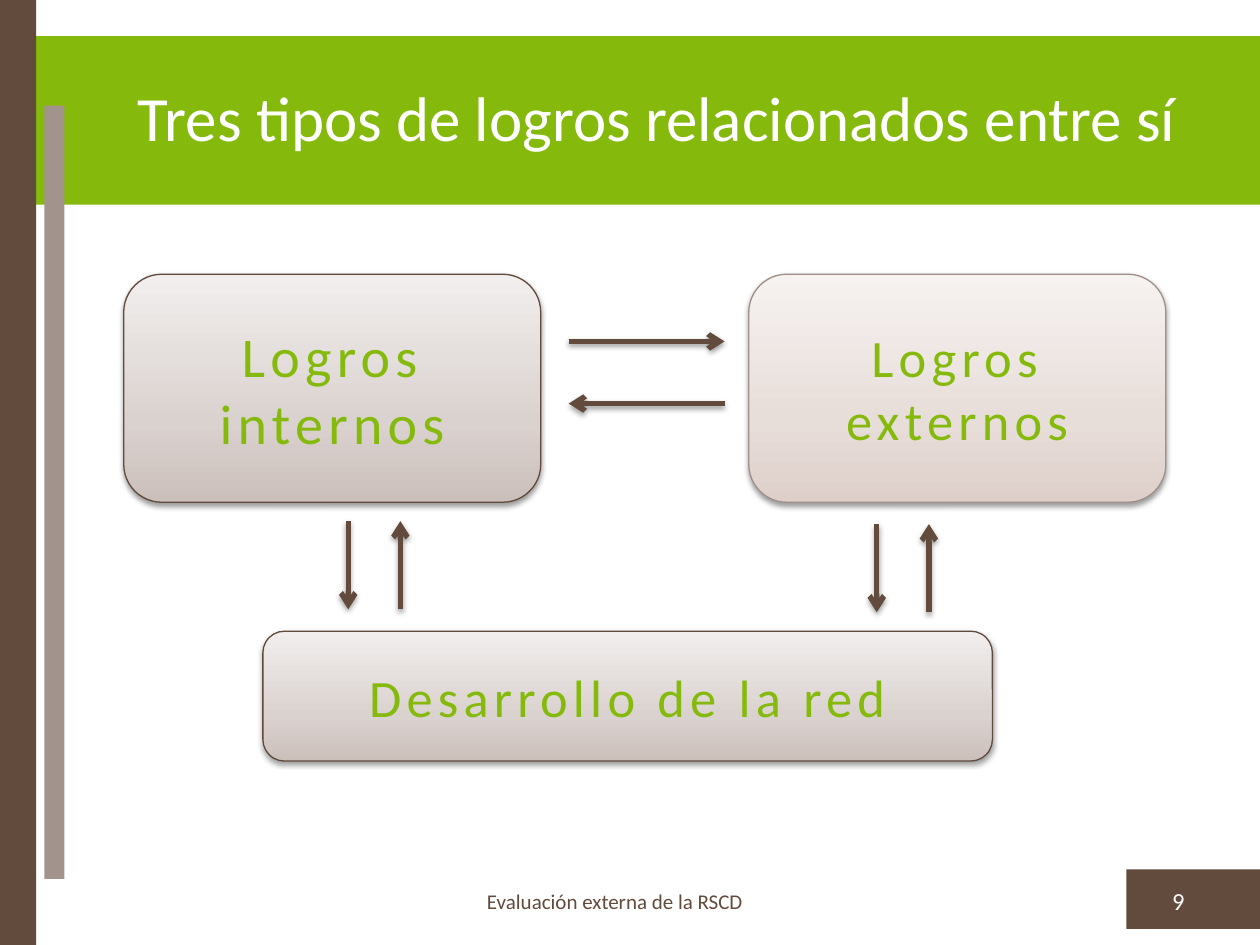
import copy
from typing import NamedTuple

import pptx
import pptx.dml.color
import pptx.enum.shapes
import pptx.enum.text
import pptx.oxml
import pptx.oxml.ns
import pptx.util

Pt = pptx.util.Pt
RGBColor = pptx.dml.color.RGBColor
Shape = pptx.enum.shapes.MSO_SHAPE
Align = pptx.enum.text.PP_ALIGN
qn = pptx.oxml.ns.qn

BROWN = RGBColor(0x62, 0x4B, 0x3D)
DARK_EDGE = RGBColor(0x61, 0x49, 0x3B)
LIGHT_EDGE = RGBColor(0x9F, 0x90, 0x89)
TAUPE = RGBColor(0xA2, 0x93, 0x8D)
GREEN = RGBColor(0x85, 0xBA, 0x0D)
WHITE = RGBColor(0xFF, 0xFF, 0xFF)
DARK_FADE = (RGBColor(0xCB, 0xBF, 0xBA), RGBColor(0xDA, 0xD2, 0xCF), RGBColor(0xF1, 0xEE, 0xED))
LIGHT_FADE = (RGBColor(0xDE, 0xCF, 0xCA), RGBColor(0xE7, 0xDD, 0xD9), RGBColor(0xF6, 0xF2, 0xF0))
FONT = "Calibri"


class Area(NamedTuple):
    left: float
    top: float
    width: float
    height: float


class Band(NamedTuple):
    area: Area
    color: RGBColor


class Label(NamedTuple):
    area: Area
    text: str
    size: float
    color: RGBColor
    align: Align


class Achievement(NamedTuple):
    area: Area
    text: str
    size: float
    fade: tuple[RGBColor, RGBColor, RGBColor]
    edge: RGBColor


class Arrow(NamedTuple):
    x1: float
    y1: float
    x2: float
    y2: float


BANDS = [
    Band(Area(643.7, 496.8, 76.3, 34), BROWN),
    Band(Area(0, 20.7, 720, 96.3), GREEN),
    Band(Area(0, 0, 20.7, 540), BROWN),
    Band(Area(25.4, 60.3, 11.4, 442), TAUPE),
]
LABELS = [
    Label(Area(257.8, 500.4, 187.2, 28.8), "Evaluación externa de la RSCD", 12, BROWN, Align.CENTER),
    Label(Area(516.2, 500.4, 167.8, 28.8), "9", 14, WHITE, Align.RIGHT),
    Label(Area(31, 21.6, 689, 90), "Tres tipos de logros relacionados entre sí", 36, WHITE, Align.CENTER),
]
ACHIEVEMENTS = [
    Achievement(Area(70.7, 156.7, 238.3, 130.3), "Logros internos", 32, DARK_FADE, DARK_EDGE),
    Achievement(Area(427.9, 156.7, 238.3, 130.3), "Logros externos", 30, LIGHT_FADE, LIGHT_EDGE),
    Achievement(Area(150.2, 360.7, 416.9, 74.2), "Desarrollo de la red", 30, DARK_FADE, DARK_EDGE),
]
ARROWS = [
    Arrow(325, 195.1, 414, 195.1),
    Arrow(414, 230.6, 325, 230.6),
]
for x, top in ((199, 297.8), (501, 299.5)):
    ARROWS += [Arrow(x, top, x, top + 50.4), Arrow(x + 29.8, top + 50.4, x + 29.8, top)]


def lengths(area: Area) -> list[pptx.util.Length]:
    return [Pt(v) for v in area]


def write(sp, text: str, size: float, color: RGBColor, align: Align):
    """Fill a shape with one vertically centred run and return the run."""
    tf = sp.text_frame
    tf.word_wrap = True
    tf.vertical_anchor = pptx.enum.text.MSO_ANCHOR.MIDDLE
    p = tf.paragraphs[0]
    p.alignment = align
    r = p.add_run()
    r.text = text
    r.font.name = FONT
    r.font.size = Pt(size)
    r.font.color.rgb = color
    return r


def soft_shadow():
    return pptx.oxml.parse_xml(
        f'<a:effectLst {pptx.oxml.ns.nsdecls("a")}>'
        '<a:outerShdw blurRad="40000" dist="20000" dir="5400000" rotWithShape="0">'
        '<a:srgbClr val="000000"><a:alpha val="38000"/></a:srgbClr>'
        '</a:outerShdw></a:effectLst>'
    )


def draw_band(s, band: Band) -> None:
    sp = s.shapes.add_shape(Shape.RECTANGLE, *lengths(band.area))
    sp.shadow.inherit = False
    sp.fill.solid()
    sp.fill.fore_color.rgb = band.color
    sp.line.fill.background()


def draw_label(s, label: Label) -> None:
    sp = s.shapes.add_textbox(*lengths(label.area))
    write(sp, label.text, label.size, label.color, label.align)


def fade_upwards(sp, colors: tuple[RGBColor, RGBColor, RGBColor]) -> None:
    """Three-stop gradient from the bottom edge to the top edge."""
    sp.fill.gradient()
    sp.fill.gradient_angle = 90
    first = sp._element.spPr.find(".//" + qn("a:gs"))
    first.addnext(copy.deepcopy(first))
    for stop, color, position in zip(sp.fill.gradient_stops, colors, (0, 0.35, 1)):
        stop.color.rgb = color
        stop.position = position


def draw_achievement(s, item: Achievement) -> None:
    sp = s.shapes.add_shape(Shape.ROUNDED_RECTANGLE, *lengths(item.area))
    fade_upwards(sp, item.fade)
    sp.line.color.rgb = item.edge
    sp.line.width = Pt(0.75)
    sp._element.spPr.append(soft_shadow())
    r = write(sp, item.text, item.size, GREEN, Align.CENTER)
    r.font._element.set("spc", "300")
    sp.text_frame.paragraphs[0].space_after = Pt(10)


def draw_arrow(s, arrow: Arrow) -> None:
    cx = s.shapes.add_connector(
        pptx.enum.shapes.MSO_CONNECTOR.STRAIGHT, *(Pt(v) for v in arrow)
    )
    cx.line.color.rgb = BROWN
    cx.line.width = Pt(3)
    cx.line._get_or_add_ln().append(
        pptx.oxml.parse_xml(f'<a:tailEnd {pptx.oxml.ns.nsdecls("a")} type="arrow"/>')
    )
    cx._element.spPr.append(soft_shadow())


def main() -> None:
    prs = pptx.Presentation()
    prs.slide_width, prs.slide_height = Pt(720), Pt(540)
    s = prs.slides.add_slide(prs.slide_layouts[6])
    for band in BANDS:
        draw_band(s, band)
    for item in ACHIEVEMENTS:
        draw_achievement(s, item)
    for arrow in ARROWS:
        draw_arrow(s, arrow)
    for label in LABELS:
        draw_label(s, label)
    prs.save("out.pptx")


if __name__ == "__main__":
    main()
